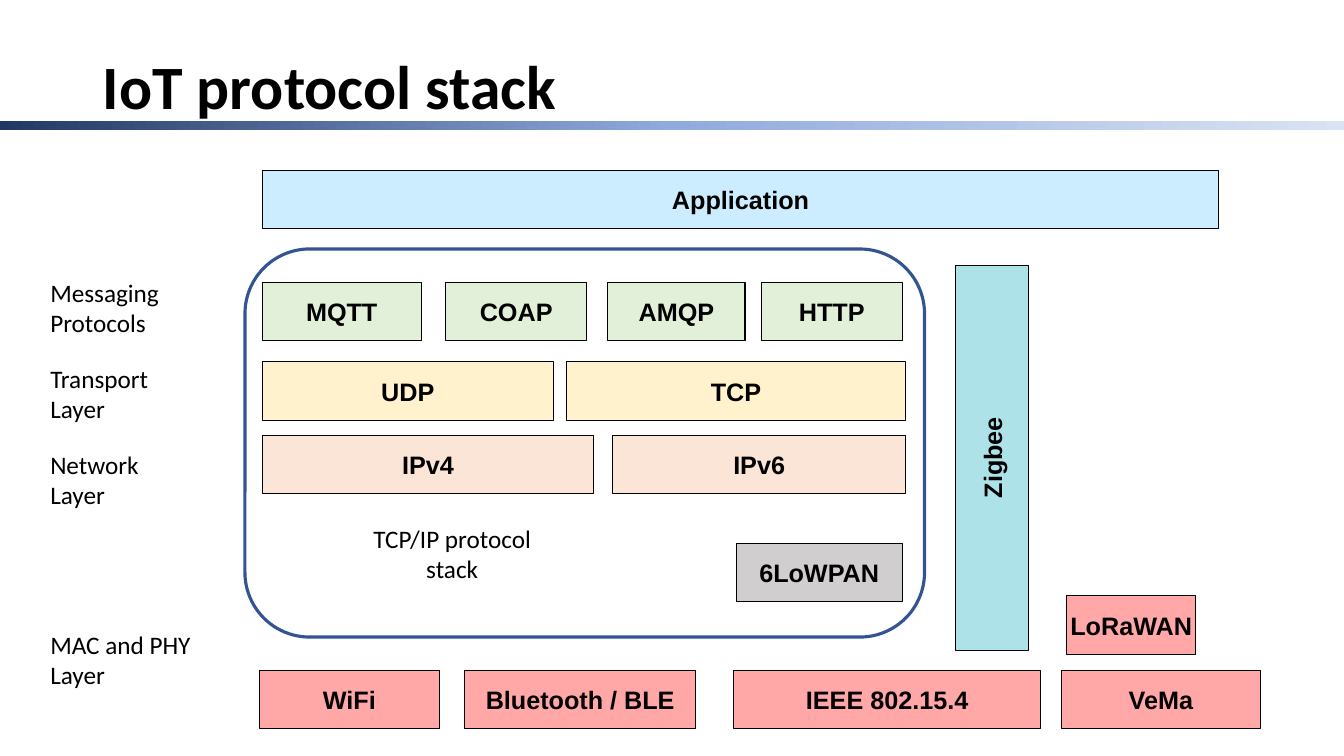
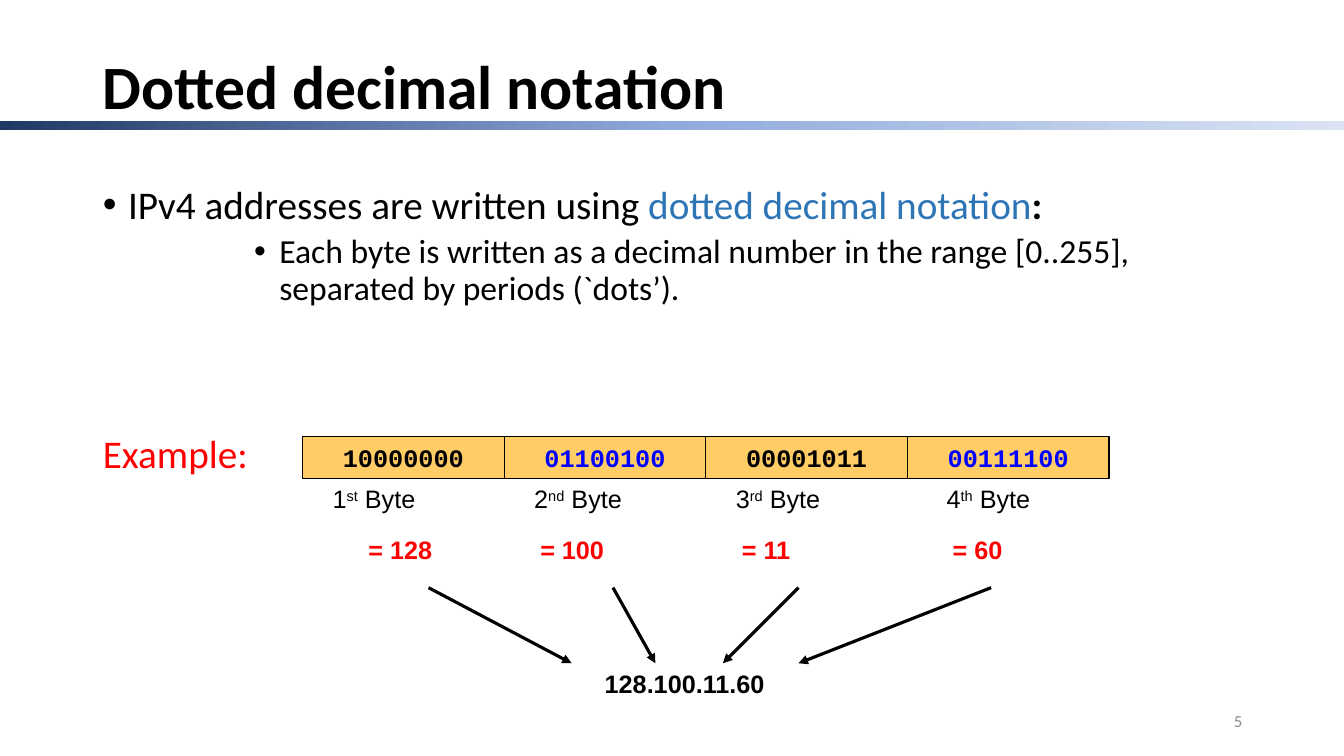
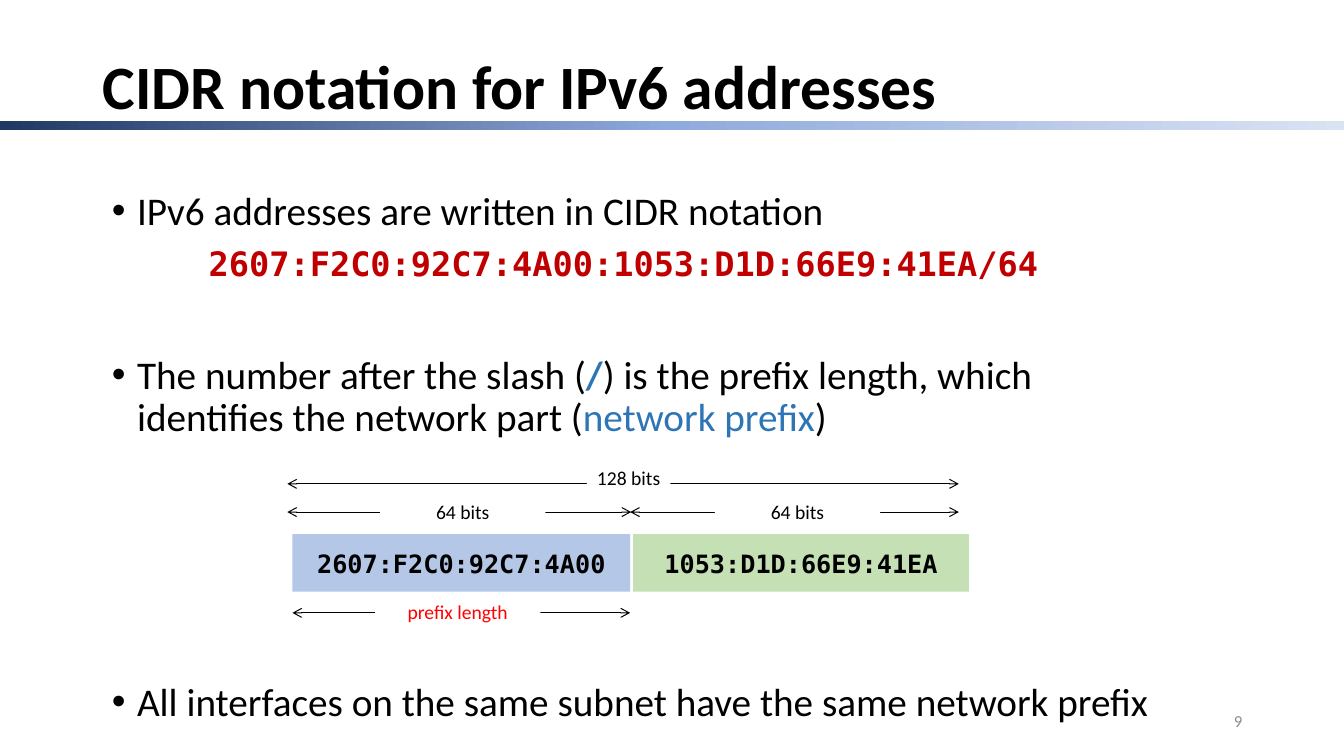
from copy import deepcopy

from lxml import etree
from pptx import Presentation
from pptx.dml.color import RGBColor
from pptx.enum.shapes import MSO_CONNECTOR as Connector, MSO_SHAPE as Shape
from pptx.enum.text import MSO_ANCHOR as Anchor, MSO_AUTO_SIZE as AutoSize, PP_ALIGN as Align
from pptx.oxml.ns import qn
from pptx.util import Inches, Pt

BLACK = RGBColor(0x00, 0x00, 0x00)
WHITE = RGBColor(0xFF, 0xFF, 0xFF)
GRAY = RGBColor(0x8C, 0x8C, 0x8C)
RED = RGBColor(0xFF, 0x00, 0x00)
DARK_RED = RGBColor(0xC0, 0x00, 0x00)
BLUE = RGBColor(0x00, 0x00, 0xFF)
TERM_BLUE = RGBColor(0x2E, 0x75, 0xB6)
FRAME_BLUE = RGBColor(0x32, 0x54, 0x91)
BAND_COLORS = (RGBColor(0x20, 0x38, 0x64), RGBColor(0x8F, 0xAA, 0xDC), RGBColor(0xDA, 0xE3, 0xF3))
SKY = RGBColor(0xCC, 0xEC, 0xFF)
GREEN = RGBColor(0xE2, 0xF0, 0xD9)
YELLOW = RGBColor(0xFF, 0xF2, 0xCC)
PEACH = RGBColor(0xFB, 0xE5, 0xD6)
SILVER = RGBColor(0xD0, 0xCE, 0xCE)
PINK = RGBColor(0xFF, 0xA8, 0xA7)
TEAL = RGBColor(0xAD, 0xE3, 0xE8)
ORANGE = RGBColor(0xFF, 0xCC, 0x66)
PREFIX_BLUE = RGBColor(0xB4, 0xC7, 0xE7)
HOST_GREEN = RGBColor(0xC5, 0xE0, 0xB4)

TEXT_FONT = "Calibri"
BOX_FONT = "Arial"
BYTE_FONT = "Courier New"
ADDRESS_FONT = "DejaVu Sans Mono"


def place(shape, at):
    shape.left, shape.top, shape.width, shape.height = (Inches(length) for length in at)


def add_run(paragraph, text, size=18, font=TEXT_FONT, color=BLACK, bold=False, raised=False):
    run = paragraph.add_run()
    run.text = text
    run.font.size = Pt(size)
    run.font.name = font
    run.font.bold = bold
    run.font.color.rgb = color
    if raised:
        run.font._element.set("baseline", "30000")


def set_bullet(paragraph, left, bullet):
    properties = paragraph._p.get_or_add_pPr()
    properties.set("marL", str(Inches(left)))
    properties.set("indent", str(Inches(-0.25 if bullet else 0)))
    if bullet:
        etree.SubElement(properties, qn("a:buChar")).set("char", "•")
    else:
        etree.SubElement(properties, qn("a:buNone"))


class Deck:
    def __init__(self):
        self.presentation = Presentation()
        self.presentation.slide_width = Inches(13.33)
        self.presentation.slide_height = Inches(7.5)
        self.slide = None

    def new_slide(self, title, number=None, with_body=False):
        layout = self.presentation.slide_layouts[1 if with_body else 5]
        first = self.slide is None
        self.slide = self.presentation.slides.add_slide(layout)
        if first:
            self.add_master_band()
        shape = self.slide.shapes.title
        place(shape, (0.92, 0.4, 11.5, 0.97))
        shape.text_frame.auto_size = AutoSize.NONE
        shape.text_frame.vertical_anchor = Anchor.MIDDLE
        paragraph = shape.text_frame.paragraphs[0]
        paragraph.alignment = Align.LEFT
        paragraph.line_spacing = 0.9
        add_run(paragraph, title, 44, bold=True)
        if number:
            self.text((9.42, 6.95, 3, 0.4), [(number, dict(size=12, color=GRAY))],
                      Align.RIGHT, Anchor.MIDDLE)

    def add_master_band(self):
        """Draw the title band once and hand it to the slide master."""
        band = self.box((0, 1.2, 13.33, 0.09), outline=None)
        band.fill.gradient()
        band.fill.gradient_angle = 0
        stop_list = band.element.find(".//" + qn("a:gsLst"))
        stop_list.insert(1, deepcopy(stop_list[0]))
        for stop, position, color in zip(band.fill.gradient_stops, (0, 0.5, 1), BAND_COLORS):
            stop.position = position
            stop.color.rgb = color
        self.presentation.slide_master.shapes.element.append(band.element)

    def body(self, at, items):
        """Fill the body placeholder; each item is (runs, level, left, bullet, space before)."""
        shape = self.slide.placeholders[1]
        place(shape, at)
        frame = shape.text_frame
        frame.auto_size = AutoSize.NONE
        for index, (runs, level, left, bullet, before) in enumerate(items):
            paragraph = frame.add_paragraph() if index else frame.paragraphs[0]
            paragraph.level = level
            paragraph.line_spacing = 0.9
            paragraph.space_before = Pt(before)
            set_bullet(paragraph, left, bullet)
            for text, style in runs:
                add_run(paragraph, text, **{"size": 28, **style})

    def text(self, at, runs, align=Align.LEFT, anchor=Anchor.TOP, wrap=True):
        shape = self.slide.shapes.add_textbox(*(Inches(length) for length in at))
        frame = shape.text_frame
        frame.word_wrap = wrap
        frame.vertical_anchor = anchor
        paragraph = frame.paragraphs[0]
        paragraph.alignment = align
        for text, style in runs:
            for index, line in enumerate(text.split("\n")):
                if index:
                    paragraph.add_line_break()
                add_run(paragraph, line, **style)

    def box(self, at, text="", fill=None, outline=BLACK, weight=0.75, kind=Shape.RECTANGLE, **style):
        shape = self.slide.shapes.add_shape(kind, *(Inches(length) for length in at))
        shape.shadow.inherit = False
        if fill is None:
            shape.fill.background()
        else:
            shape.fill.solid()
            shape.fill.fore_color.rgb = fill
        if outline is None:
            shape.line.fill.background()
        else:
            shape.line.color.rgb = outline
            shape.line.width = Pt(weight)
        if text:
            frame = shape.text_frame
            frame.word_wrap = False
            frame.vertical_anchor = Anchor.MIDDLE
            frame.paragraphs[0].alignment = Align.CENTER
            add_run(frame.paragraphs[0], text, **{"font": BOX_FONT, "bold": True, **style})
        return shape

    def arrow(self, start, end, weight, tail, head=None):
        line = self.slide.shapes.add_connector(
            Connector.STRAIGHT, *(Inches(length) for length in (*start, *end)))
        line.line.color.rgb = BLACK
        line.line.width = Pt(weight)
        outline = line.line._get_or_add_ln()
        for tag, kind in (("a:headEnd", head), ("a:tailEnd", tail)):
            if kind:
                etree.SubElement(outline, qn(tag)).set("type", kind)
        etree.SubElement(line.element.spPr, qn("a:effectLst"))

    def dimension(self, left, right, y, label, label_at, color=BLACK):
        """Draw a double-headed measure with its label over the line."""
        self.arrow((left, y), (right, y), 0.75, "arrow", "arrow")
        self.box(label_at, label, WHITE, None, font=TEXT_FONT, size=14, color=color, bold=False)


def protocol_stack(deck):
    deck.new_slide("IoT protocol stack")
    rows = [
        (1.69, SKY, [("Application", 2.6, 9.49)]),
        (2.8, GREEN, [("MQTT", 2.6, 1.58), ("COAP", 4.42, 1.4),
                      ("AMQP", 6.03, 1.36), ("HTTP", 7.55, 1.4)]),
        (3.59, YELLOW, [("UDP", 2.6, 2.89), ("TCP", 5.62, 3.36)]),
        (4.32, PEACH, [("IPv4", 2.6, 3.29), ("IPv6", 6.08, 2.9)]),
        (5.39, SILVER, [("6LoWPAN", 7.3, 1.65)]),
        (5.91, PINK, [("LoRaWAN", 10.58, 1.28)]),
        (6.65, PINK, [("WiFi", 2.57, 1.79), ("Bluetooth / BLE", 4.61, 2.29),
                      ("IEEE 802.15.4", 7.28, 3.04), ("VeMa", 10.53, 1.97)]),
    ]
    for top, fill, protocols in rows:
        for name, left, width in protocols:
            deck.box((left, top, width, 0.58), name, fill)
    zigbee = deck.box((7.93, 4.18, 3.82, 0.72), "Zigbee", TEAL)
    zigbee.rotation = 270
    deck.box((2.43, 2.47, 6.74, 3.85), outline=FRAME_BLUE, weight=2.25, kind=Shape.ROUNDED_RECTANGLE)
    layers = [("Messaging\nProtocols", 2.7), ("Transport\nLayer", 3.55),
              ("Network\nLayer", 4.41), ("MAC and PHY\nLayer", 6.19)]
    for name, top in layers:
        deck.text((0.4, top, 1.61, 0.71), [(name, {})], wrap=False)
    deck.text((3.1, 5.14, 2.77, 0.71), [("TCP/IP protocol\nstack", {})], Align.CENTER)


def dotted_decimal(deck):
    deck.new_slide("Dotted decimal notation", "5", with_body=True)
    deck.body((0.92, 1.79, 11.5, 4.97), [
        ([("IPv4 addresses are written using ", {}),
          ("dotted decimal notation", dict(color=TERM_BLUE)),
          (":", dict(bold=True))], 0, 0.25, True, 10),
        ([("Each byte is written as a decimal number in the range [0..255], "
           "separated by periods (`dots’).", dict(size=24))], 3, 1.75, True, 5),
        ([("Example:", dict(color=RED))], 0, 0, False, 91),
    ])
    columns = [
        ("10000000", "st", "128", 3.2, Align.CENTER, 4.25, 5.67),
        ("01100100", "nd", "100", 5.2, Align.LEFT, 6.08, 6.5),
        ("00001011", "rd", "11", 7.2, Align.LEFT, 7.92, 7.17),
        ("00111100", "th", "60", 9.29, Align.LEFT, 9.83, 7.92),
    ]
    for index, (bits, ordinal, value, left, align, arrow_from, arrow_to) in enumerate(columns):
        deck.box((3 + 2 * index, 4.33, 2, 0.42), bits, ORANGE,
                 font=BYTE_FONT, color=BLUE if index % 2 else BLACK)
        deck.text((left, 4.75, 1.42, 0.4), [
            (str(index + 1), dict(font=BOX_FONT)),
            (ordinal, dict(font=BOX_FONT, raised=True)),
            (" Byte", dict(font=BOX_FONT))])
        deck.text((left + 0.06, 5.25, 1.42, 0.4),
                  [(f"= {value}", dict(font=BOX_FONT, color=RED, bold=True))], align)
        deck.arrow((arrow_from, 5.83), (arrow_to, 6.58), 2.25, "triangle")
    deck.text((5, 6.58, 3.58, 0.4),
              [("128.100.11.60", dict(font=BOX_FONT, bold=True))], Align.CENTER)


def cidr_notation(deck):
    deck.new_slide("CIDR notation for IPv6 addresses", "9", with_body=True)
    deck.body((1.01, 1.85, 10.83, 5.65), [
        ([("IPv6 addresses are written in CIDR notation", {})], 0, 0.25, True, 10),
        ([("2607:F2C0:92C7:4A00:1053:D1D:66E9:41EA/64",
           dict(size=24, font=ADDRESS_FONT, color=DARK_RED, bold=True))], 0, 0.96, False, 10),
        ([("The number after the slash (", {}),
          ("/", dict(color=TERM_BLUE, bold=True)),
          (") is the prefix length, which identifies the network part (", {}),
          ("network prefix", dict(color=TERM_BLUE)),
          (")", {})], 0, 0.25, True, 51),
        ([("All interfaces on the same subnet have the same network prefix", {})],
         0, 0.25, True, 173),
    ])
    deck.box((2.9, 5.3, 3.35, 0.57), "2607:F2C0:92C7:4A00", PREFIX_BLUE, None, font=ADDRESS_FONT)
    deck.box((6.28, 5.3, 3.33, 0.57), "1053:D1D:66E9:41EA", HOST_GREEN, None, font=ADDRESS_FONT)
    deck.dimension(2.85, 9.51, 4.8, "128 bits", (5.82, 4.57, 0.83, 0.34))
    deck.dimension(2.85, 6.26, 5.08, "64 bits", (3.77, 4.91, 1.64, 0.34))
    deck.dimension(6.25, 9.51, 5.08, "64 bits", (7.09, 4.91, 1.64, 0.34))
    deck.dimension(2.9, 6.25, 6.08, "prefix length", (3.72, 5.9, 1.64, 0.34), RED)


def main():
    deck = Deck()
    protocol_stack(deck)
    dotted_decimal(deck)
    cidr_notation(deck)
    deck.presentation.save("out.pptx")


if __name__ == "__main__":
    main()
